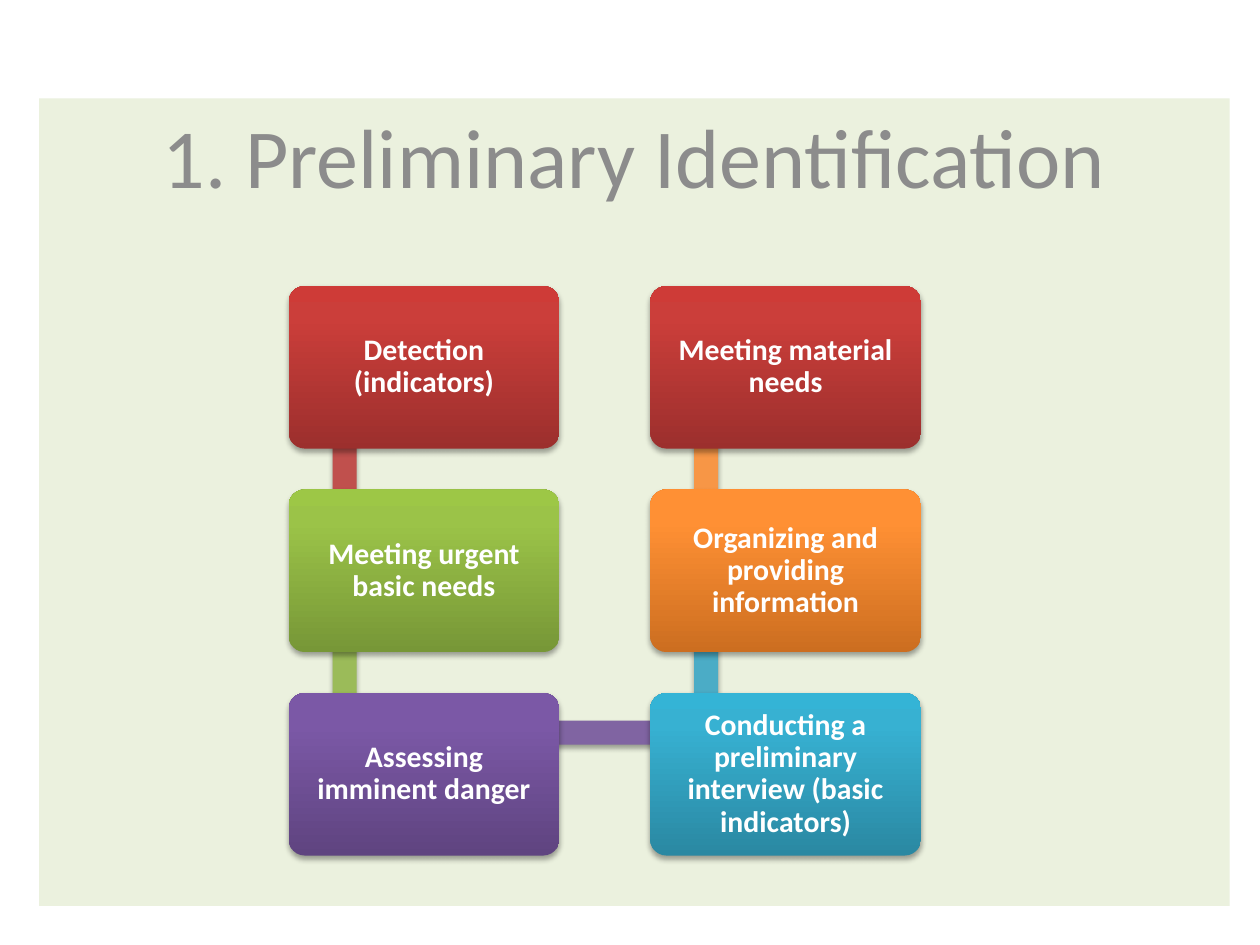
from lxml.etree import SubElement
from pptx import Presentation
from pptx.dml.color import RGBColor
from pptx.enum.shapes import MSO_SHAPE
from pptx.enum.text import MSO_ANCHOR, PP_ALIGN
from pptx.oxml.ns import qn
from pptx.util import Inches, Pt

FONT = "Calibri"
PANEL = RGBColor(0xEB, 0xF1, 0xDE)
TITLE_GREY = RGBColor(0x8C, 0x8C, 0x8C)
WHITE = RGBColor(0xFF, 0xFF, 0xFF)

# Bar colours
RED = RGBColor(0xC0, 0x50, 0x4D)
GREEN = RGBColor(0x9B, 0xBB, 0x59)
PURPLE = RGBColor(0x80, 0x64, 0xA2)
BLUE = RGBColor(0x4B, 0xAC, 0xC6)
ORANGE = RGBColor(0xF7, 0x96, 0x46)

# Gradient colours of the step boxes, from bottom to top
GRADIENT_POSITIONS = (0, 80, 100)
RED_SHADES = ("9C2F2D", "CB3E3A", "CE3B37")
GREEN_SHADES = ("779737", "9BC348", "9DC746")
PURPLE_SHADES = ("5F4480", "7B58A6", "7C57A8")
BLUE_SHADES = ("2A88A2", "37B1D2", "34B4D6")
ORANGE_SHADES = ("CC6E20", "FF9034", "FF9136")

# Step grid
LEFT, TOP = 2.29, 2.27
COLUMN_STEP, ROW_STEP = 2.87, 1.615
BOX_WIDTH, BOX_HEIGHT = 2.15, 1.29
BAR_THICKNESS = 0.19

# Steps in reading order: column, row, text, box shades, bar colour, bar rotation
STEPS = [
    (0, 0, "Detection (indicators)", RED_SHADES, RED, 90),
    (0, 1, "Meeting urgent basic needs", GREEN_SHADES, GREEN, 90),
    (0, 2, "Assessing imminent danger", PURPLE_SHADES, PURPLE, 0),
    (1, 2, "Conducting a preliminary interview (basic indicators)",
     BLUE_SHADES, BLUE, 270),
    (1, 1, "Organizing and providing information", ORANGE_SHADES, ORANGE, 270),
    (1, 0, "Meeting material needs", RED_SHADES, None, 0),
]


def add_plain_shape(page, kind, left, top, width, height):
    shape = page.shapes.add_shape(
        kind, Inches(left), Inches(top), Inches(width), Inches(height))
    shape.line.fill.background()
    shape.shadow.inherit = False
    return shape


def add_soft_shadow(shape):
    effects = shape._element.spPr.find(qn("a:effectLst"))
    shadow = SubElement(effects, qn("a:outerShdw"), blurRad=str(Pt(3.1)),
                        dist=str(Pt(1.8)), dir="5400000", rotWithShape="0")
    color = SubElement(shadow, qn("a:srgbClr"), val="000000")
    SubElement(color, qn("a:alpha"), val="35000")


def fill_gradient(shape, shades):
    shape.fill.gradient()
    shape.fill.gradient_angle = 90
    stops = shape._element.spPr.find(qn("a:gradFill")).find(qn("a:gsLst"))
    for stop in list(stops):
        stops.remove(stop)
    for position, shade in zip(GRADIENT_POSITIONS, shades):
        stop = SubElement(stops, qn("a:gs"), pos=str(position * 1000))
        SubElement(stop, qn("a:srgbClr"), val=shade)


def write_text(shape, text, size, color, bold=False):
    frame = shape.text_frame
    frame.word_wrap = True
    frame.text = text
    para = frame.paragraphs[0]
    para.alignment = PP_ALIGN.CENTER
    font = para.runs[0].font
    font.name, font.size, font.bold = FONT, Pt(size), bold
    font.color.rgb = color
    return para


def add_title_panel(page, text):
    panel = add_plain_shape(page, MSO_SHAPE.RECTANGLE, 0.31, 0.78, 9.45, 6.41)
    panel.fill.solid()
    panel.fill.fore_color.rgb = PANEL
    panel.text_frame.vertical_anchor = MSO_ANCHOR.TOP
    write_text(panel, text, 48, TITLE_GREY).space_before = Pt(3)


def add_bar(page, left, top, length, color, rotation):
    bar = add_plain_shape(
        page, MSO_SHAPE.RECTANGLE, left, top, length, BAR_THICKNESS)
    bar.rotation = rotation
    bar.fill.solid()
    bar.fill.fore_color.rgb = color
    add_soft_shadow(bar)


def add_step_box(page, left, top, text, shades):
    box = add_plain_shape(
        page, MSO_SHAPE.ROUNDED_RECTANGLE, left, top, BOX_WIDTH, BOX_HEIGHT)
    box.adjustments[0] = 0.1
    fill_gradient(box, shades)
    add_soft_shadow(box)
    frame = box.text_frame
    frame.vertical_anchor = MSO_ANCHOR.MIDDLE
    frame.margin_left = frame.margin_right = Inches(0.1)
    frame.margin_top = frame.margin_bottom = Inches(0.1)
    write_text(box, text, 17, WHITE, bold=True).line_spacing = 0.9


def main():
    deck = Presentation()
    deck.slide_width, deck.slide_height = Inches(10), Inches(7.5)
    page = deck.slides.add_slide(deck.slide_layouts[6])

    add_title_panel(page, "1. Preliminary Identification")

    # Each bar leads on to the next step and lies behind its own box
    for column, row, text, shades, bar_color, rotation in STEPS:
        left = LEFT + column * COLUMN_STEP
        top = TOP + row * ROW_STEP
        if rotation:
            # An upright bar joins two rows; after 270 degrees it runs upwards
            upper = top if rotation == 90 else top - ROW_STEP
            add_bar(page, left - 0.36, upper + 1.03, 1.61, bar_color, rotation)
        elif bar_color:
            add_bar(page, left + 0.45, top + 0.22, 2.86, bar_color, rotation)
        add_step_box(page, left, top, text, shades)

    deck.save("out.pptx")


if __name__ == "__main__":
    main()
